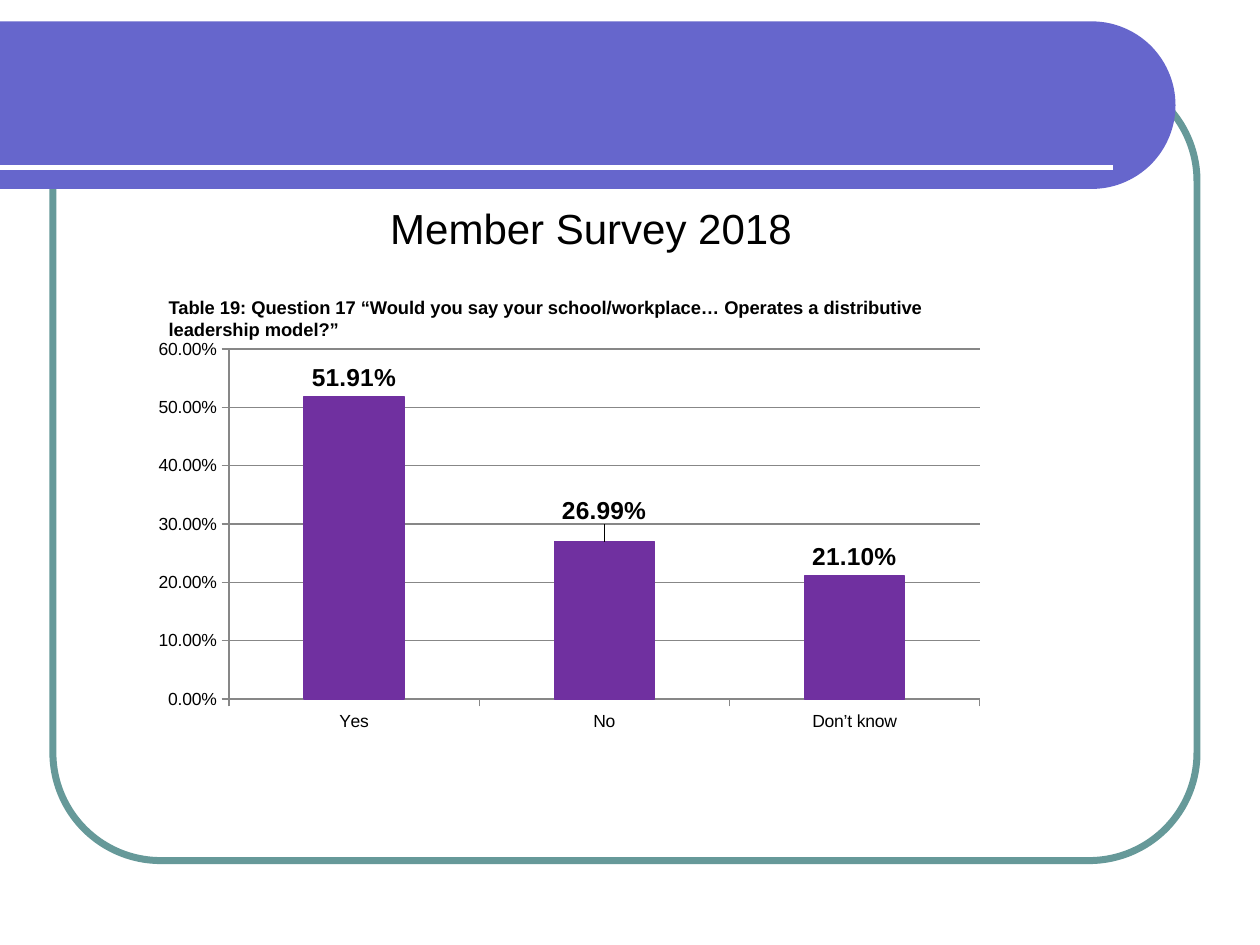
import math

import lxml.etree
import pptx
import pptx.chart.data
import pptx.dml.color
import pptx.enum.chart
import pptx.enum.shapes
import pptx.enum.text
import pptx.oxml
import pptx.oxml.ns
import pptx.util

Inches = pptx.util.Inches
Pt = pptx.util.Pt

COLORS = {
    "band": "6666CC",
    "frame": "669999",
    "bar": "7030A0",
    "grid": "878787",
    "text": "000000",
    "white": "FFFFFF",
}
FONT = "Arial"
CHART_NAMESPACE = pptx.oxml.ns.nsdecls("c")
EXTENSION_NAMESPACE = "http://schemas.microsoft.com/office/drawing/2012/chart"


def rgb(name):
    return pptx.dml.color.RGBColor.from_string(COLORS[name])


def format_font(font, size, bold=False):
    font.name = FONT
    font.size = Pt(size)
    font.bold = bold
    font.color.rgb = rgb("text")


def write_text(shape, text, size=12, bold=False, wrap=True, align=None):
    frame = shape.text_frame
    frame.word_wrap = wrap
    frame.vertical_anchor = pptx.enum.text.MSO_ANCHOR.TOP
    frame.auto_size = pptx.enum.text.MSO_AUTO_SIZE.NONE
    paragraph = frame.paragraphs[0]
    paragraph.alignment = align
    run = paragraph.add_run()
    run.text = text
    format_font(run.font, size, bold)


def manual_layout(x, y, width=None, height=None):
    parts = {"x": x, "y": y}
    if width is not None:
        parts = {"layoutTarget": "inner", "xMode": "edge", "yMode": "edge",
                 "x": x, "y": y, "w": width, "h": height}
    inside = "".join(f'<c:{tag} val="{value}"/>' for tag, value in parts.items())
    return pptx.oxml.parse_xml(
        f"<c:layout {CHART_NAMESPACE}><c:manualLayout>{inside}</c:manualLayout></c:layout>")


class SlideBuilder:
    def __init__(self, presentation):
        self.slide = presentation.slides.add_slide(presentation.slide_layouts[5])
        self.shapes = self.slide.shapes

    def title(self, text, left, top, width, height):
        shape = self.shapes.title
        shape.left, shape.top = Inches(left), Inches(top)
        shape.width, shape.height = Inches(width), Inches(height)
        write_text(shape, text, size=24, wrap=False,
                   align=pptx.enum.text.PP_ALIGN.CENTER)

    def caption(self, text, left, top, width, height):
        shape = self.shapes.add_textbox(
            Inches(left), Inches(top), Inches(width), Inches(height))
        write_text(shape, text, size=10.5, bold=True)

    def frame(self, left, top, width, height):
        shape = self.shapes.add_shape(
            pptx.enum.shapes.MSO_SHAPE.ROUNDED_RECTANGLE,
            Inches(left), Inches(top), Inches(width), Inches(height))
        shape.adjustments[0] = 0.137
        shape.shadow.inherit = False
        shape.fill.background()
        shape.line.color.rgb = rgb("frame")
        shape.line.width = Pt(4)

    def band(self, top, width, height):
        radius = height / 2
        center = width - radius
        angles = [math.radians(degrees) for degrees in range(-90, 91, 3)]
        points = [(Inches(center + radius * math.cos(angle)),
                   Inches(top + radius + radius * math.sin(angle))) for angle in angles]
        builder = self.shapes.build_freeform(0, Inches(top))
        builder.add_line_segments(points + [(0, Inches(top + height))], close=True)
        shape = builder.convert_to_shape()
        shape.shadow.inherit = False
        shape.fill.solid()
        shape.fill.fore_color.rgb = rgb("band")
        shape.line.fill.background()

    def rule(self, top, width):
        connector = self.shapes.add_connector(
            pptx.enum.shapes.MSO_CONNECTOR.STRAIGHT,
            0, Inches(top), Inches(width), Inches(top))
        connector.line.color.rgb = rgb("white")
        connector.line.width = Pt(3)
        lxml.etree.SubElement(connector._element.spPr, pptx.oxml.ns.qn("a:effectLst"))

    def column_chart(self, values, left, top, width, height):
        data = pptx.chart.data.CategoryChartData(number_format="0.00%")
        data.categories = list(values)
        data.add_series("Series 1", list(values.values()))
        chart = self.shapes.add_chart(
            pptx.enum.chart.XL_CHART_TYPE.COLUMN_CLUSTERED,
            Inches(left), Inches(top), Inches(width), Inches(height), data).chart
        chart.has_legend = False
        chart.has_title = False
        format_font(chart.font, 10)
        self.style_axes(chart)
        plot = chart.plots[0]
        plot.gap_width = 150
        plot.vary_by_categories = False
        series = plot.series[0]
        series.format.fill.solid()
        series.format.fill.fore_color.rgb = rgb("bar")
        series.format.line.color.rgb = rgb("bar")
        series.format.line.width = Pt(0.75)
        self.style_labels(series)
        plot_area = chart._chartSpace.chart.plotArea
        for layout in plot_area.findall(pptx.oxml.ns.qn("c:layout")):
            plot_area.remove(layout)
        plot_area.insert(0, manual_layout(0.1, 0.05, 0.88, 0.86))

    def style_axes(self, chart):
        for axis in (chart.category_axis, chart.value_axis):
            axis.major_tick_mark = pptx.enum.chart.XL_TICK_MARK.OUTSIDE
            axis.format.line.color.rgb = rgb("grid")
            axis.format.line.width = Pt(0.75)
            format_font(axis.tick_labels.font, 10)
        value_axis = chart.value_axis
        value_axis.minimum_scale, value_axis.maximum_scale = 0, 0.6
        value_axis.major_unit = 0.1
        value_axis.tick_labels.number_format = "0.00%"
        value_axis.tick_labels.number_format_is_linked = False
        value_axis.has_major_gridlines = True
        value_axis.major_gridlines.format.line.color.rgb = rgb("grid")
        value_axis.major_gridlines.format.line.width = Pt(0.75)

    def style_labels(self, series):
        outside = pptx.enum.chart.XL_LABEL_POSITION.OUTSIDE_END
        labels = series.data_labels
        labels.show_value = True
        labels.number_format = "0.00%"
        labels.number_format_is_linked = False
        labels.position = outside
        format_font(labels.font, 14, bold=True)
        raised = series.points[1].data_label
        format_font(raised.font, 14, bold=True)
        raised.position = outside
        raised_element = labels._element.find(pptx.oxml.ns.qn("c:dLbl"))
        raised_element.insert(1, manual_layout(0, -0.03))
        labels._element.append(pptx.oxml.parse_xml(
            f'<c:extLst {CHART_NAMESPACE}>'
            f'<c:ext uri="{{CE6537A1-D6FC-4f65-9D91-7224C49458BB}}" '
            f'xmlns:c15="{EXTENSION_NAMESPACE}">'
            f'<c15:showLeaderLines val="1"/></c:ext></c:extLst>'))


def main():
    presentation = pptx.Presentation()
    presentation.slide_width = Inches(10)
    presentation.slide_height = Inches(7.5)
    builder = SlideBuilder(presentation)
    builder.frame(0.42, 0.58, 9.08, 6.25)
    builder.band(0.17, 9.33, 1.33)
    builder.rule(1.33, 8.83)
    builder.column_chart({"Yes": 0.5191, "No": 0.2699, "Don’t know": 0.211},
                         1.14, 2.61, 6.77, 3.23)
    builder.caption("Table 19: Question 17 “Would you say your school/workplace… "
                    "Operates a distributive leadership model?”", 1.24, 2.3, 6.77, 0.45)
    builder.title("Member Survey 2018", 2.98, 1.56, 3.42, 0.5)
    presentation.save("out.pptx")


if __name__ == "__main__":
    main()
